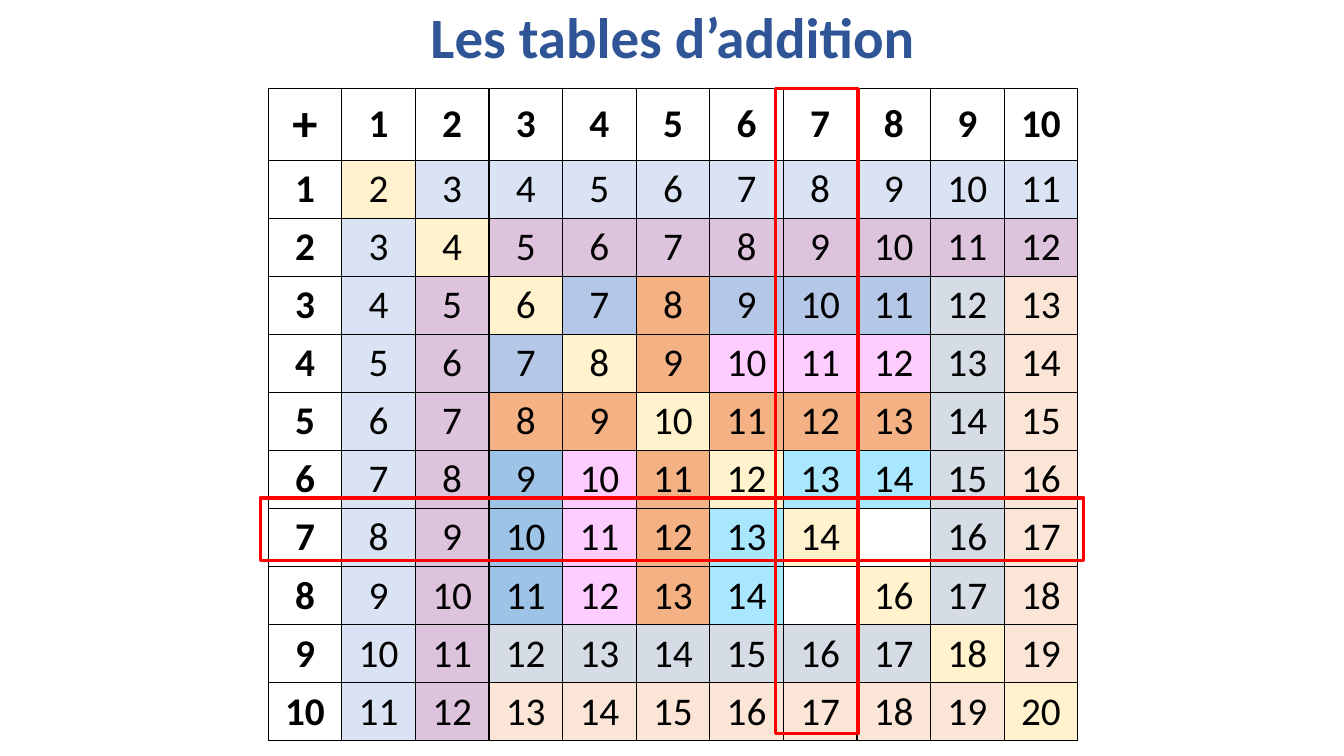
import pptx
import pptx.dml.color
import pptx.enum.shapes
import pptx.enum.text
import pptx.oxml
import pptx.oxml.ns
import pptx.util

Inches = pptx.util.Inches
RGBColor = pptx.dml.color.RGBColor

FONT = "Calibri"
BLACK = RGBColor(0x00, 0x00, 0x00)
WHITE = RGBColor(0xFF, 0xFF, 0xFF)
RED = RGBColor(0xFF, 0x00, 0x00)
NAVY = RGBColor(0x2F, 0x55, 0x97)
CREAM = RGBColor(0xFF, 0xF2, 0xCC)
PALE_BLUE = RGBColor(0xDA, 0xE3, 0xF3)
MAUVE = RGBColor(0xDE, 0xC3, 0xDC)
PEACH = RGBColor(0xFB, 0xE5, 0xD6)
GREY = RGBColor(0xD6, 0xDC, 0xE5)
ORANGE = RGBColor(0xF4, 0xB1, 0x83)
BLUE = RGBColor(0xB4, 0xC7, 0xE7)
MID_BLUE = RGBColor(0x9D, 0xC3, 0xE6)
PINK = RGBColor(0xFF, 0xCC, 0xFF)
CYAN = RGBColor(0xA8, 0xE7, 0xFE)

COUNT = 10
HEADER_H, ROW_H, COL_W = 0.7, 0.57, 0.73
UNKNOWN = {(7, 8), (8, 7)}


def write_text(tf, text, size=28, bold=False, color=BLACK, spacing=None):
    p = tf.paragraphs[0]
    p.alignment = pptx.enum.text.PP_ALIGN.CENTER
    p.line_spacing = spacing
    r = p.add_run()
    r.text = text
    r.font.name = FONT
    r.font.size = pptx.util.Pt(size)
    r.font.bold = bold
    r.font.color.rgb = color


def sum_color(row, col):
    """Fill of the cell that holds row + col."""
    low, high = min(row, col), max(row, col)
    if low == high:
        return CREAM
    if low <= 2:
        return PALE_BLUE if low == 1 else MAUVE
    if high >= 9:
        return GREY if high == 9 else PEACH
    if 5 in (row, col):
        return ORANGE
    if low == 3:
        return MID_BLUE if row >= 6 else BLUE
    return PINK if low == 4 else CYAN


def add_borders(cell):
    tcPr = cell._tc.get_or_add_tcPr()
    for side in ("lnL", "lnR", "lnT", "lnB"):
        tcPr.append(pptx.oxml.parse_xml(
            f'<a:{side} {pptx.oxml.ns.nsdecls("a")} w="12700"><a:solidFill>'
            f'<a:srgbClr val="{BLACK}"/></a:solidFill></a:{side}>'))


def fill_cell(cell, row, col):
    add_borders(cell)
    cell.vertical_anchor = pptx.enum.text.MSO_ANCHOR.MIDDLE
    if (row, col) in UNKNOWN:
        cell.fill.background()
        return
    is_header = row == 0 or col == 0
    cell.fill.solid()
    cell.fill.fore_color.rgb = WHITE if is_header else sum_color(row, col)
    if row == col == 0:
        write_text(cell.text_frame, "+", size=36, bold=True)
    else:
        write_text(cell.text_frame, str(row + col), bold=is_header)


def add_title(s, x, y, w, h):
    tf = s.shapes.add_textbox(Inches(x), Inches(y), Inches(w), Inches(h)).text_frame
    tf.word_wrap = True
    tf.vertical_anchor = pptx.enum.text.MSO_ANCHOR.MIDDLE
    write_text(tf, "Les tables d’addition", size=40.7, bold=True, color=NAVY, spacing=0.8)


def add_addition_table(s, x, y):
    n = COUNT + 1
    table = s.shapes.add_table(n, n, Inches(x), Inches(y), Inches(n * COL_W),
                               Inches(HEADER_H + COUNT * ROW_H)).table
    for col in table.columns:
        col.width = Inches(COL_W)
    for i, row in enumerate(table.rows):
        row.height = Inches(ROW_H if i else HEADER_H)
        for j, cell in enumerate(row.cells):
            fill_cell(cell, i, j)


def add_highlight(s, x, y, w, h):
    sp = s.shapes.add_shape(pptx.enum.shapes.MSO_SHAPE.RECTANGLE,
                            Inches(x), Inches(y), Inches(w), Inches(h))
    sp.shadow.inherit = False
    sp.fill.background()
    sp.line.color.rgb = RED
    sp.line.width = pptx.util.Pt(2.25)


def main():
    prs = pptx.Presentation()
    prs.slide_width, prs.slide_height = Inches(13.33), Inches(7.5)
    s = prs.slides.add_slide(prs.slide_layouts[6])

    add_addition_table(s, 2.66, 0.88)
    add_title(s, 0.92, 0.08, 11.5, 0.67)
    # Column and row of 7
    add_highlight(s, 7.69, 0.88, 0.82, 6.4)
    add_highlight(s, 2.58, 4.94, 8.17, 0.62)

    prs.save("out.pptx")


if __name__ == "__main__":
    main()
